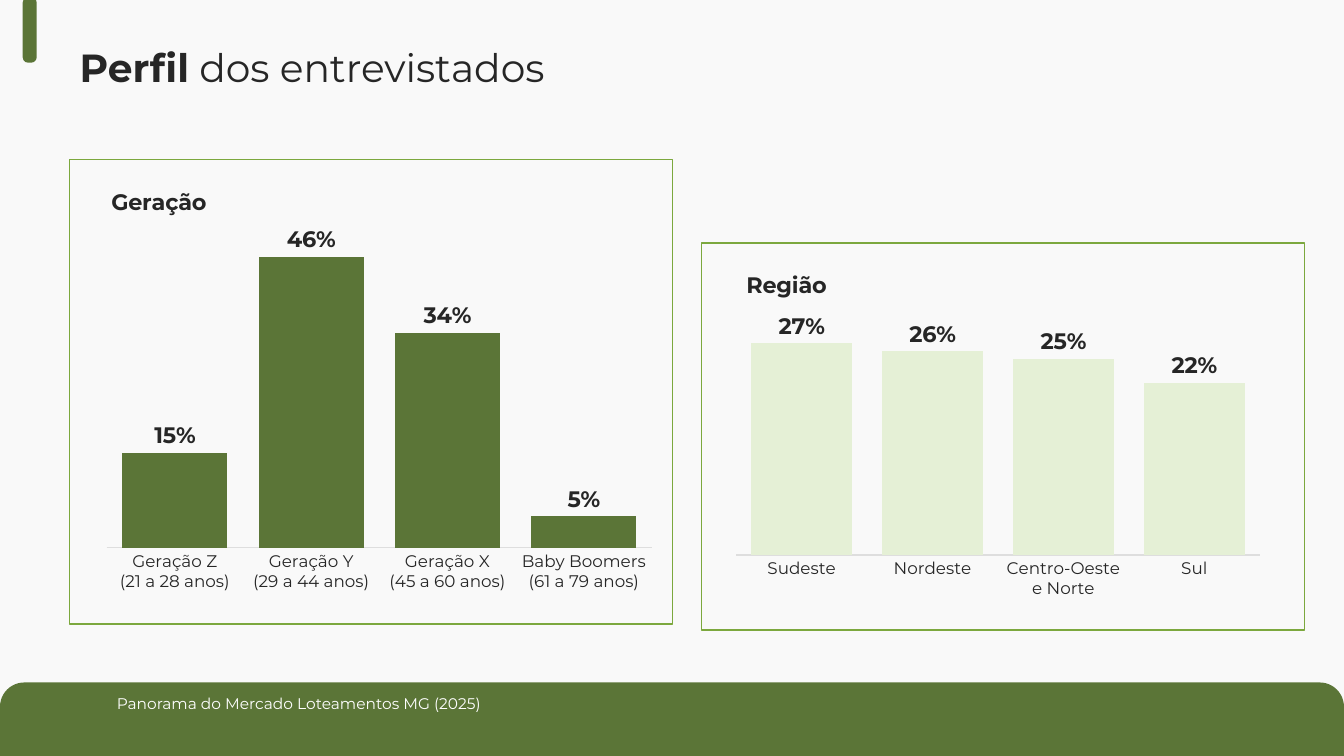
from dataclasses import dataclass
from typing import Any

from lxml import etree
from pptx import Presentation
from pptx import util as u
from pptx.chart import data as chart_data
from pptx.dml import color as dml
from pptx.enum import chart as ch
from pptx.enum import shapes, text
from pptx.oxml import ns


@dataclass(frozen=True)
class Theme:
    font: str = "Montserrat"
    paper: str = "F9F9F9"
    ink: str = "262626"
    white: str = "FFFFFF"
    green: str = "5B7537"
    pale_green: str = "E5F0D6"
    frame: str = "7CA83E"
    axis: str = "DEDEDE"
    title_size: float = 28
    heading_size: float = 16
    category_size: float = 12
    source_size: float = 11


@dataclass(frozen=True)
class Box:
    left: float
    top: float
    width: float
    height: float

    def lengths(self) -> list[u.Length]:
        return [u.Pt(v) for v in (self.left, self.top, self.width, self.height)]


@dataclass(frozen=True)
class Panel:
    heading: str
    heading_at: dict[str, float]
    shares: dict[str, float]
    top_share: float
    bar_color: str
    chart: Box
    plot: dict[str, float]
    frame: Box


THEME = Theme()
PANELS = [
    Panel(
        "Geração", {"x": 0.02, "y": 0.05},
        {"Geração Z\n(21 a 28 anos)": 0.15, "Geração Y\n(29 a 44 anos)": 0.46,
         "Geração X\n(45 a 60 anos)": 0.34, "Baby Boomers\n(61 a 79 anos)": 0.05},
        0.5, THEME.green, Box(68.4, 113.8, 411.8, 339.8),
        {"x": 0.019, "y": 0.152, "w": 0.946, "h": 0.665},
        Box(49.7, 113.8, 430.6, 331.9),
    ),
    Panel(
        "Região", {"x": 0.03, "y": 0.105},
        {"Sudeste": 0.27, "Nordeste": 0.26, "Centro-Oeste\ne Norte": 0.25, "Sul": 0.22},
        0.3, THEME.pale_green, Box(518.4, 159.1, 395.3, 290.2),
        {"x": 0.019, "y": 0.239, "w": 0.946, "h": 0.579},
        Box(501.1, 173.5, 430.6, 276.5),
    ),
]


def rgb(value: str) -> dml.RGBColor:
    return dml.RGBColor.from_string(value)


def apply(target: Any, values: dict[str, Any]) -> None:
    for name, value in values.items():
        setattr(target, name, value)


def set_font(font: Any, size: float, color: str = THEME.ink, bold: bool = False) -> None:
    apply(font, {"name": THEME.font, "size": u.Pt(size), "bold": bold})
    font.color.rgb = rgb(color)


def set_layout(parent: Any, index: int, fractions: dict[str, float], inner: bool = False) -> None:
    """Place a chart part at fractions of the chart area."""
    for old in parent.findall(ns.qn("c:layout")):
        parent.remove(old)
    layout = etree.Element(ns.qn("c:layout"))
    manual = etree.SubElement(layout, ns.qn("c:manualLayout"))
    settings = {"layoutTarget": "inner"} if inner else {}
    settings |= {f"{key}Mode": "edge" for key in "xy"}
    settings |= {key: str(value) for key, value in fractions.items()}
    for tag, value in settings.items():
        etree.SubElement(manual, ns.qn(f"c:{tag}")).set("val", value)
    parent.insert(index, layout)


def add_solid(slide: Any, kind: shapes.MSO_SHAPE, box: Box, corners: list[float]) -> None:
    shape = slide.shapes.add_shape(kind, *box.lengths())
    shape.shadow.inherit = False
    shape.fill.solid()
    shape.fill.fore_color.rgb = rgb(THEME.green)
    shape.line.fill.background()
    for index, corner in enumerate(corners):
        shape.adjustments[index] = corner


def add_frame(slide: Any, box: Box) -> None:
    frame = slide.shapes.add_shape(shapes.MSO_SHAPE.RECTANGLE, *box.lengths())
    frame.shadow.inherit = False
    frame.fill.background()
    frame.line.color.rgb = rgb(THEME.frame)
    frame.line.width = u.Pt(1)


def add_bars(slide: Any, panel: Panel) -> None:
    shares = chart_data.CategoryChartData(number_format="0%")
    shares.categories = list(panel.shares)
    shares.add_series(panel.heading, list(panel.shares.values()))
    chart = slide.shapes.add_chart(
        ch.XL_CHART_TYPE.COLUMN_CLUSTERED, *panel.chart.lengths(), shares
    ).chart
    chart.has_legend = False
    set_font(chart.font, THEME.category_size)

    heading = chart.chart_title.text_frame
    heading.text = panel.heading
    set_font(heading.paragraphs[0].runs[0].font, THEME.heading_size, bold=True)
    chart.chart_title.include_in_layout = False
    title_part = chart._chartSpace.find(f".//{ns.qn('c:title')}")
    set_layout(title_part, 1, panel.heading_at)
    plot_part = chart._chartSpace.find(f".//{ns.qn('c:plotArea')}")
    set_layout(plot_part, 0, panel.plot, inner=True)

    apply(chart.value_axis, {
        "minimum_scale": 0, "maximum_scale": panel.top_share,
        "has_major_gridlines": False, "visible": False,
    })
    categories = chart.category_axis
    apply(categories, {
        "major_tick_mark": ch.XL_TICK_MARK.NONE,
        "minor_tick_mark": ch.XL_TICK_MARK.NONE,
        "has_major_gridlines": False,
    })
    set_font(categories.tick_labels.font, THEME.category_size)
    categories.format.line.color.rgb = rgb(THEME.axis)
    categories.format.line.width = u.Pt(0.75)

    bars = chart.plots[0]
    apply(bars, {"gap_width": 30, "overlap": 100, "vary_by_categories": False,
                 "has_data_labels": True})
    apply(bars.data_labels, {
        "show_value": True, "number_format": "0%", "number_format_is_linked": False,
        "position": ch.XL_LABEL_POSITION.OUTSIDE_END,
    })
    set_font(bars.data_labels.font, THEME.heading_size, bold=True)
    fill = bars.series[0].format.fill
    fill.solid()
    fill.fore_color.rgb = rgb(panel.bar_color)


def write_title(slide: Any, box: Box) -> None:
    title = slide.shapes.title
    apply(title, dict(zip(("left", "top", "width", "height"), box.lengths())))
    apply(title.text_frame, {
        "vertical_anchor": text.MSO_ANCHOR.MIDDLE, "word_wrap": True,
        "auto_size": text.MSO_AUTO_SIZE.NONE,
    })
    line = title.text_frame.paragraphs[0]
    apply(line, {"alignment": text.PP_ALIGN.LEFT, "line_spacing": 0.9, "space_before": u.Pt(0)})
    for words, bold in (("Perfil", True), (" dos entrevistados", False)):
        run = line.add_run()
        run.text = words
        set_font(run.font, THEME.title_size, bold=bold)


def write_source(slide: Any, box: Box) -> None:
    source = slide.shapes.add_textbox(*box.lengths()).text_frame
    apply(source, {"word_wrap": True, "auto_size": text.MSO_AUTO_SIZE.SHAPE_TO_FIT_TEXT})
    run = source.paragraphs[0].add_run()
    run.text = "Panorama do Mercado Loteamentos MG (2025)"
    set_font(run.font, THEME.source_size, THEME.white)


def main() -> None:
    deck = Presentation()
    apply(deck, {"slide_width": u.Pt(960), "slide_height": u.Pt(540)})
    slide = deck.slides.add_slide(deck.slide_layouts[5])
    slide.background.fill.solid()
    slide.background.fill.fore_color.rgb = rgb(THEME.paper)

    add_solid(slide, shapes.MSO_SHAPE.ROUND_2_SAME_RECTANGLE, Box(0, 487.5, 960, 52.5), [0.33, 0])
    add_solid(slide, shapes.MSO_SHAPE.ROUNDED_RECTANGLE, Box(16.2, -2, 10, 46.8), [0.39])
    write_title(slide, Box(49.7, 21.6, 375, 56.9))
    for panel in PANELS:
        add_bars(slide, panel)
        add_frame(slide, panel.frame)
    write_source(slide, Box(76.3, 492.5, 505.4, 20.9))
    deck.save("out.pptx")


if __name__ == "__main__":
    main()
